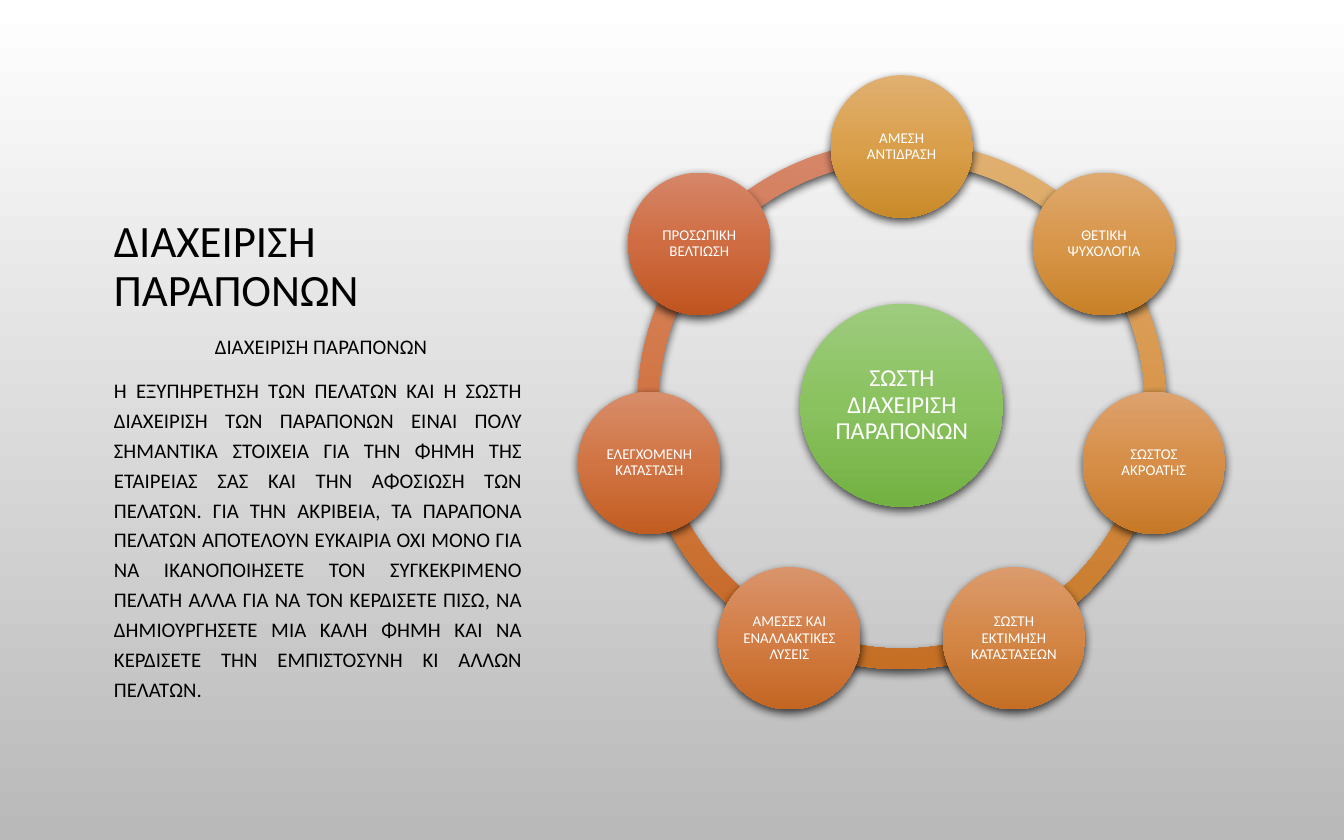
import copy
import math

import lxml.etree
import pptx
import pptx.dml.color
import pptx.enum.lang
import pptx.enum.shapes
import pptx.enum.text
import pptx.oxml.ns
import pptx.util

COLS, ROWS = 40, 25
WIDTH, HEIGHT = pptx.util.Inches(10), pptx.util.Inches(6.25)
FONT = "Calibri"
SHAPE = pptx.enum.shapes.MSO_SHAPE
ALIGN = pptx.enum.text.PP_ALIGN
ANCHOR = pptx.enum.text.MSO_ANCHOR
GREEK = pptx.enum.lang.MSO_LANGUAGE_ID.GREEK

TITLE = "ΔΙΑΧΕΙΡΙΣΗ ΠΑΡΑΠΟΝΩΝ"
LEAD = "\tΔΙΑΧΕΊΡΙΣΗ ΠΑΡΑΠΌΝΩΝ"
BODY = (
    "Η ΕΞΥΠΗΡΈΤΗΣΗ ΤΩΝ ΠΕΛΑΤΏΝ ΚΑΙ Η ΣΩΣΤΉ ΔΙΑΧΕΊΡΙΣΗ ΤΩΝ ΠΑΡΑΠΌΝΩΝ "
    "ΕΊΝΑΙ ΠΟΛΎ ΣΗΜΑΝΤΙΚΆ ΣΤΟΙΧΕΊΑ ΓΙΑ ΤΗΝ ΦΉΜΗ ΤΗΣ ΕΤΑΙΡΕΊΑΣ ΣΑΣ ΚΑΙ "
    "ΤΗΝ ΑΦΟΣΊΩΣΗ ΤΩΝ ΠΕΛΑΤΏΝ. ΓΙΑ ΤΗΝ ΑΚΡΊΒΕΙΑ, ΤΑ ΠΑΡΆΠΟΝΑ ΠΕΛΑΤΏΝ "
    "ΑΠΟΤΕΛΟΎΝ ΕΥΚΑΙΡΊΑ ΌΧΙ ΜΌΝΟ ΓΙΑ ΝΑ ΙΚΑΝΟΠΟΙΉΣΕΤΕ ΤΟΝ ΣΥΓΚΕΚΡΙΜΈΝΟ "
    "ΠΕΛΆΤΗ ΑΛΛΆ ΓΙΑ ΝΑ ΤΟΝ ΚΕΡΔΊΣΕΤΕ ΠΊΣΩ, ΝΑ ΔΗΜΙΟΥΡΓΉΣΕΤΕ ΜΊΑ ΚΑΛΉ "
    "ΦΉΜΗ ΚΑΙ ΝΑ ΚΕΡΔΊΣΕΤΕ ΤΗΝ ΕΜΠΙΣΤΟΣΎΝΗ ΚΙ ΆΛΛΩΝ ΠΕΛΑΤΏΝ."
)
HUB = "ΣΩΣΤΗ ΔΙΑΧΕΙΡΙΣΗ ΠΑΡΑΠΟΝΩΝ"
STEPS = [
    "ΑΜΕΣΗ ΑΝΤΙΔΡΑΣΗ",
    "ΘΕΤΙΚΗ ΨΥΧΟΛΟΓΙΑ",
    "ΣΩΣΤΟΣ ΑΚΡΟΑΤΗΣ",
    "ΣΩΣΤΗ ΕΚΤΙΜΗΣΗ ΚΑΤΑΣΤΑΣΕΩΝ",
    "ΑΜΕΣΕΣ ΚΑΙ ΕΝΑΛΛΑΚΤΙΚΕΣ ΛΥΣΕΙΣ",
    "ΕΛΕΓΧΟΜΕΝΗ ΚΑΤΑΣΤΑΣΗ",
    "ΠΡΟΣΩΠΙΚΗ ΒΕΛΤΙΩΣΗ",
]
GOLD = ["E0B071", "DA9F4B", "C98A29"]
RUST = ["D68669", "CF6C42", "C0541F"]
GREEN = ["9ECC7E", "8AC25F", "73B142"]
MID = (26.84, 12.06)  # centre of the ring, in columns and rows
TURN = 216  # full circle in block arc adjustment units
TOP = 162  # twelve o'clock in the same units


def color(text):
    return pptx.dml.color.RGBColor.from_string(text)


def blend(first, last, share):
    """Mix two hex colours; share 0 gives the first, 1 the last."""
    pairs = zip(bytes.fromhex(first), bytes.fromhex(last))
    return "".join(f"{round(a + (b - a) * share):02X}" for a, b in pairs)


def shade(owner, fill, tones):
    """Fill from top to bottom with evenly spaced tones."""
    fill.gradient()
    fill.gradient_angle = 270
    stops = next(owner.element.iter(pptx.oxml.ns.qn("a:gsLst")))
    while len(stops) < len(tones):
        stops.append(copy.deepcopy(stops[0]))
    for i, (stop, tone) in enumerate(zip(fill.gradient_stops, tones)):
        stop.position = i / (len(tones) - 1)
        stop.color.rgb = color(tone)


def cast(shape):
    """Give the shape a soft shadow straight below it."""
    shape.shadow.inherit = False
    glow = next(shape.element.iter(pptx.oxml.ns.qn("a:effectLst")))
    drop = lxml.etree.SubElement(
        glow, pptx.oxml.ns.qn("a:outerShdw"),
        blurRad=str(pptx.util.Pt(5)), dist=str(pptx.util.Pt(2)),
        dir="5400000", algn="ctr", rotWithShape="0")
    tint = lxml.etree.SubElement(drop, pptx.oxml.ns.qn("a:srgbClr"), val="000000")
    lxml.etree.SubElement(tint, pptx.oxml.ns.qn("a:alpha"), val="69000")


class Page:
    def __init__(self, slide):
        self.slide = slide

    def place(self, x, y, w, h):
        """Turn columns and rows into slide lengths."""
        across, down = WIDTH / COLS, HEIGHT / ROWS
        return [round(v) for v in (x * across, y * down, w * across, h * down)]

    def back(self, tones):
        shade(self.slide, self.slide.background.fill, tones)

    def style(self, para, size, tone, align, lead):
        """Set the look; Greek all caps are drawn without accents."""
        para.alignment = align
        para.line_spacing = lead
        para.font.size = pptx.util.Pt(size)
        para.font.name = FONT
        para.font.color.rgb = color(tone)
        for run in para.runs:
            run.font.language_id = GREEK
            run._r.get_or_add_rPr().set("cap", "all")

    def text(self, area, lines, size, lead, anchor, gap=0, tab=0):
        """Add justified text; gap is in points, tab in columns."""
        frame = self.slide.shapes.add_textbox(*self.place(*area)).text_frame
        frame.word_wrap = True
        frame.vertical_anchor = anchor
        for i, line in enumerate(lines):
            para = frame.add_paragraph() if i else frame.paragraphs[0]
            para.text = line
            if i:
                para.space_before = pptx.util.Pt(gap)
            if line.startswith("\t"):
                prop = para._p.get_or_add_pPr()
                tabs = lxml.etree.SubElement(prop, pptx.oxml.ns.qn("a:tabLst"))
                lxml.etree.SubElement(
                    tabs, pptx.oxml.ns.qn("a:tab"),
                    pos=str(self.place(tab, 0, 0, 0)[0]), algn="l")
            self.style(para, size, "000000", ALIGN.JUSTIFY, lead)

    def round(self, kind, x, y, size, tones):
        """Add a shaded shape centred on a point."""
        area = self.place(x - size / 2, y - size / 2, size, size)
        shape = self.slide.shapes.add_shape(kind, *area)
        shade(shape, shape.fill, tones)
        shape.line.fill.background()
        cast(shape)
        return shape

    def arc(self, start, end, tones):
        shape = self.round(SHAPE.BLOCK_ARC, *MID, 15.72, tones)
        for i, value in enumerate((start, end, 0.039)):
            shape.adjustments[i] = value

    def disc(self, x, y, size, tones, label, points, inset):
        frame = self.round(SHAPE.OVAL, x, y, size, tones).text_frame
        frame.word_wrap = True
        frame.vertical_anchor = ANCHOR.MIDDLE
        edge = pptx.util.Inches(inset)
        frame.margin_left = frame.margin_right = edge
        frame.margin_top = frame.margin_bottom = edge
        para = frame.paragraphs[0]
        para.text = label
        self.style(para, points, "FFFFFF", ALIGN.CENTER, 0.9)


def main():
    deck = pptx.Presentation()
    deck.slide_width, deck.slide_height = WIDTH, HEIGHT
    page = Page(deck.slides.add_slide(deck.slide_layouts[6]))
    page.back(["FFFFFF", "B9B9B9"])
    page.text((3, 2.25, 12.92, 7.35), [TITLE], 24, 0.9, ANCHOR.BOTTOM)

    count = len(STEPS)
    tones = [[blend(a, b, i / (count - 1)) for a, b in zip(GOLD, RUST)]
             for i in range(count)]
    for i in reversed(range(count)):
        start, end = ((TOP + TURN * n / count) % TURN for n in (i, i + 1))
        page.arc(start, end, tones[i])
    page.disc(*MID, 6.04, GREEN, HUB, 13, 0.02)
    for i, label in enumerate(STEPS):
        angle = math.tau * i / count
        x = MID[0] + 7.7 * math.sin(angle)
        y = MID[1] - 7.7 * math.cos(angle)
        page.disc(x, y, 4.24, tones[i], label, 8, 0.01)

    page.text((3, 9.6, 12.92, 11.52), [LEAD, BODY], 11.1, 1.2,
              ANCHOR.TOP, gap=7.5, tab=3)
    deck.save("out.pptx")


if __name__ == "__main__":
    main()
